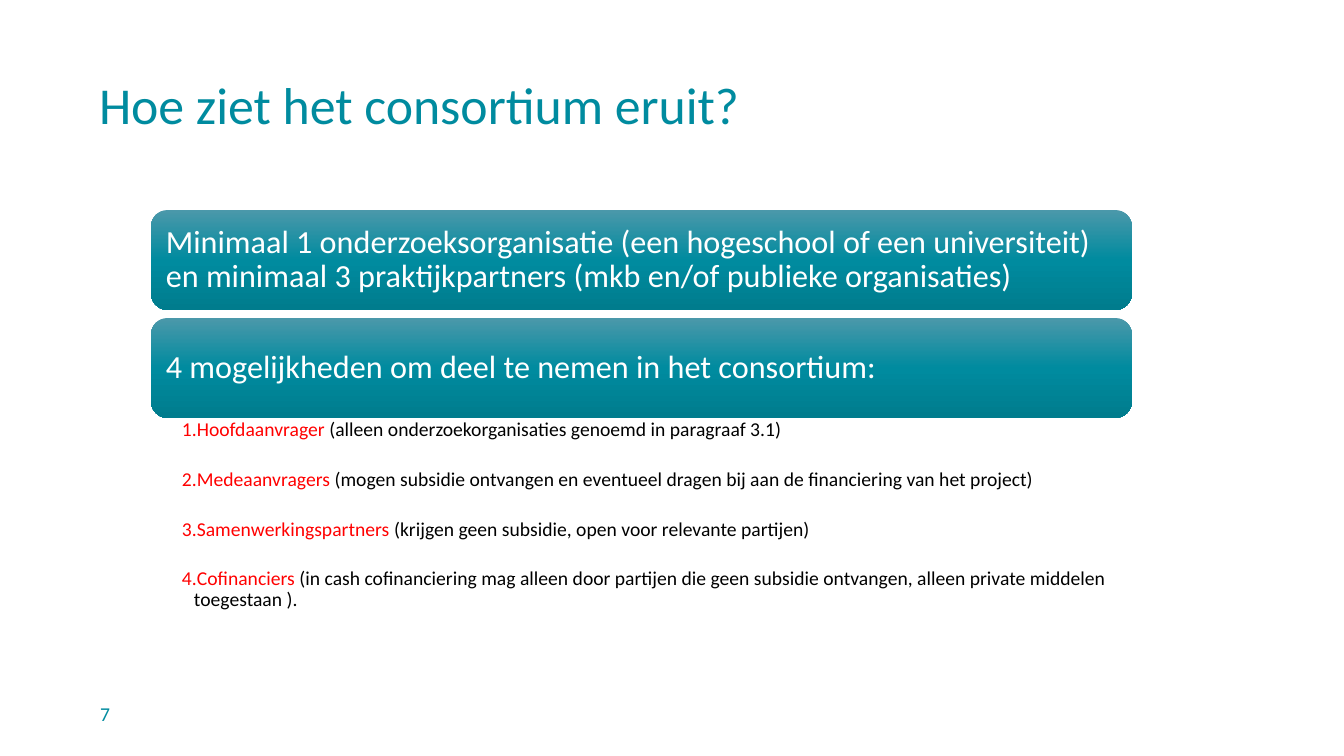
"""Build the slide on who takes part in the consortium."""
import copy

import pptx
import pptx.dml.color
import pptx.enum.shapes
import pptx.enum.text
import pptx.oxml.ns
import pptx.util

PX = 914400 / 100.8
TEAL = pptx.dml.color.RGBColor(0x00, 0x8B, 0x9F)
LIGHT_TEAL = pptx.dml.color.RGBColor(0x4B, 0x98, 0xAA)
DARK_TEAL = pptx.dml.color.RGBColor(0x00, 0x7C, 0x8D)
WHITE = pptx.dml.color.RGBColor(0xFF, 0xFF, 0xFF)
RED = pptx.dml.color.RGBColor(0xFF, 0x00, 0x00)
BLACK = pptx.dml.color.RGBColor(0x00, 0x00, 0x00)
ANCHOR = pptx.enum.text.MSO_ANCHOR
LEFT = pptx.enum.text.PP_ALIGN.LEFT

BANNERS = [
    "Minimaal 1 onderzoeksorganisatie (een hogeschool of een universiteit) "
    "en minimaal 3 praktijkpartners (mkb en/of publieke organisaties)",
    "4 mogelijkheden om deel te nemen in het consortium:",
]
ROLES = [
    ("Hoofdaanvrager", " (alleen onderzoekorganisaties genoemd in paragraaf 3.1)"),
    ("Medeaanvragers ", "(mogen subsidie ontvangen en eventueel dragen bij aan de "
     "financiering van het project)"),
    ("Samenwerkingspartners ", "(krijgen geen subsidie, open voor relevante partijen)"),
    ("Cofinanciers", " (in cash cofinanciering mag alleen door partijen die geen "
     "subsidie ontvangen, alleen private middelen toegestaan )."),
]


def px(*lengths):
    """Turn pixel lengths into EMU."""
    return [pptx.util.Emu(round(length * PX)) for length in lengths]


def set_frame(box, anchor, insets):
    """Set wrapping, anchor and insets (left, top, right, bottom)."""
    frame = box.text_frame
    frame.word_wrap = True
    frame.auto_size = pptx.enum.text.MSO_AUTO_SIZE.NONE
    frame.vertical_anchor = anchor
    (frame.margin_left, frame.margin_top,
     frame.margin_right, frame.margin_bottom) = px(*insets)
    return frame


deck = pptx.Presentation()
deck.slide_width, deck.slide_height = px(1344, 756)
page = deck.slides.add_slide(deck.slide_layouts[5])

title = page.shapes.title
title.left, title.top, title.width, title.height = px(99, 80, 1032, 59)
number = page.shapes.add_textbox(*px(100, 701, 31, 25))
for box, text, size, anchor, spacing in [
    (title, "Hoe ziet het consortium eruit?", 37, ANCHOR.TOP, 0.9),
    (number, "7", 14, ANCHOR.MIDDLE, 1.0),
]:
    para = set_frame(box, anchor, (0, 0, 0, 0)).paragraphs[0]
    para.text = text
    para.alignment = LEFT
    para.line_spacing = spacing
    para.font.name = "Calibri"
    para.font.size = pptx.util.Pt(size)
    para.font.color.rgb = TEAL

for row, text in enumerate(BANNERS):
    banner = page.shapes.add_shape(
        pptx.enum.shapes.MSO_SHAPE.ROUNDED_RECTANGLE, *px(151, 210 + 108 * row, 981, 100))
    banner.shadow.inherit = False
    banner.line.fill.background()
    banner.fill.gradient()
    banner.fill.gradient_angle = 270
    first_stop = next(banner.element.spPr.iter(pptx.oxml.ns.qn("a:gs")))
    first_stop.addnext(copy.deepcopy(first_stop))
    for stop, place, color in zip(
            banner.fill.gradient_stops, (0, 0.5, 1), (LIGHT_TEAL, TEAL, DARK_TEAL)):
        stop.position = place
        stop.color.rgb = color
    para = set_frame(banner, ANCHOR.MIDDLE, (10, 10, 10, 10)).paragraphs[0]
    para.text = text
    para.alignment = LEFT
    para.line_spacing = 0.9
    para.font.name = "Calibri"
    para.font.size = pptx.util.Pt(23)
    para.font.color.rgb = WHITE

roles = page.shapes.add_textbox(*px(151, 418, 981, 210))
frame = set_frame(roles, ANCHOR.TOP, (31, 2, 11, 2))
indent = px(12)[0]
for row, role in enumerate(ROLES):
    para = frame.add_paragraph() if row else frame.paragraphs[0]
    para.line_spacing = 0.9
    para.space_after = pptx.util.Pt(20.3)
    properties = para._p.get_or_add_pPr()
    properties.set("marL", str(indent))
    properties.set("indent", str(-indent))
    bullet = properties.makeelement(
        pptx.oxml.ns.qn("a:buAutoNum"), {"type": "arabicPeriod"})
    properties.append(bullet)
    para.font.name = "Calibri"
    para.font.size = pptx.util.Pt(14)
    for text, color in zip(role, (RED, BLACK)):
        span = para.add_run()
        span.text = text
        span.font.color.rgb = color

deck.save("out.pptx")
